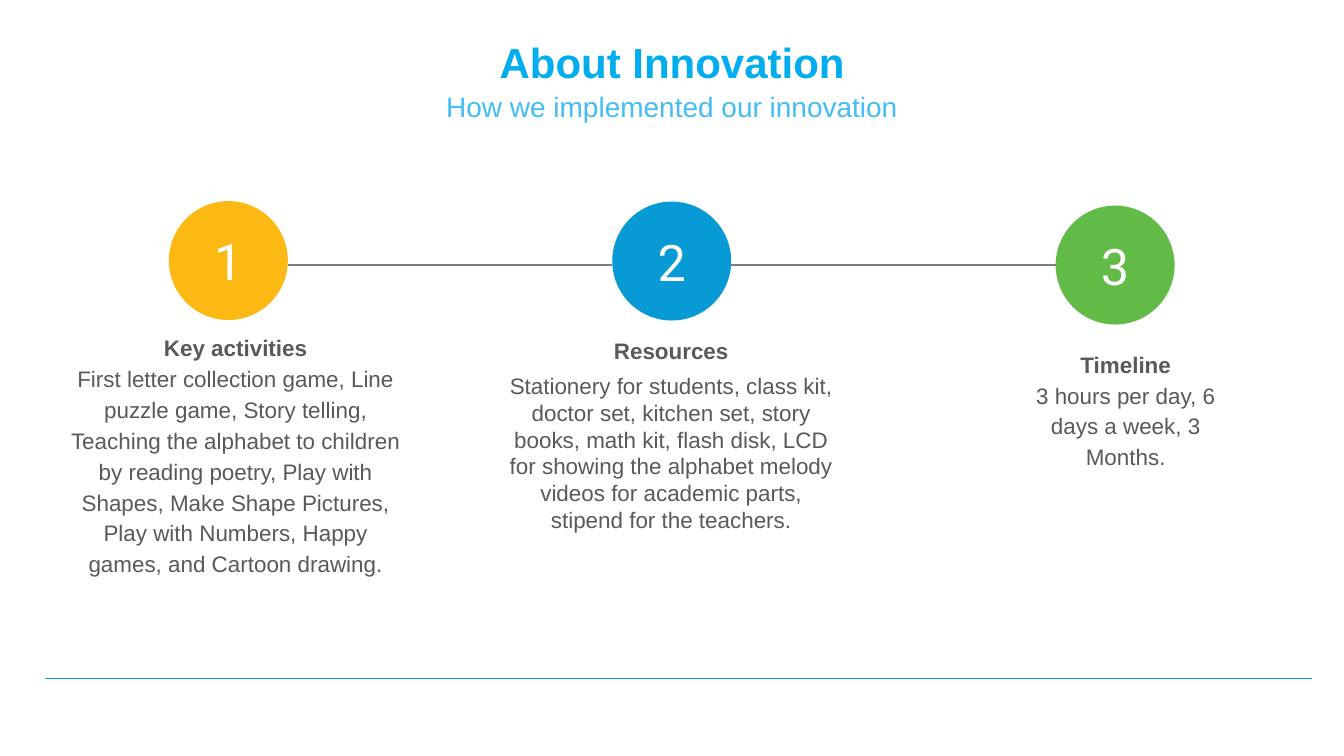
"""Build the three-step "About Innovation" slide."""
from dataclasses import dataclass
from itertools import pairwise

from pptx import Presentation
from pptx.dml.color import RGBColor
from pptx.enum.shapes import MSO_CONNECTOR, MSO_SHAPE
from pptx.enum.text import MSO_ANCHOR, PP_ALIGN
from pptx.oxml import parse_xml
from pptx.oxml.ns import nsdecls
from pptx.slide import Slide
from pptx.text.text import Font, _Paragraph
from pptx.util import Inches, Pt


@dataclass(frozen=True)
class Theme:
    title: str = "00AEEF"
    subtitle: str = "42BEF3"
    body: str = "595959"
    number: str = "FFFFFF"
    link: str = "7F7F7F"
    rule: str = "079AD4"
    text_font: str = "Arial"
    number_font: str = "Roboto"
    title_size: int = 60
    subtitle_size: int = 40
    body_size: int = 32
    number_size: int = 72


@dataclass(frozen=True)
class Box:
    left: float
    top: float
    width: float
    height: float


@dataclass(frozen=True)
class Step:
    heading: str
    detail: str
    color: str
    circle_top: float
    box: Box
    heading_spacing: float = 1.0
    detail_spacing: float = 1.0
    space_after: int = 0
    single_paragraph: bool = False


THEME = Theme()
CIRCLE_SIZE = 2.36
FIRST_CIRCLE_LEFT = 3.35
CIRCLE_PITCH = 8.795
LINK_Y = 5.26
STEPS = (
    Step(
        "Key activities",
        "First letter collection game, Line puzzle game, Story telling, "
        "Teaching the alphabet to children by reading poetry, Play with Shapes, "
        "Make Shape Pictures, Play with Numbers, Happy games, and Cartoon drawing.",
        "FDB913", 3.99, Box(1.26, 6.58, 6.83, 4.92), detail_spacing=1.15,
    ),
    Step(
        "Resources",
        "Stationery for students, class kit, doctor set, kitchen set, story books, "
        "math kit, flash disk, LCD for showing the alphabet melody videos for "
        "academic parts, stipend for the teachers.",
        "079AD5", 4.0, Box(9.9, 6.63, 6.83, 4.04), space_after=12,
    ),
    Step(
        "Timeline",
        "3 hours per day, 6 days a week, 3 Months.",
        "62BB46", 4.08, Box(20.01, 6.83, 4.64, 2.53),
        heading_spacing=1.15, single_paragraph=True,
    ),
)


def style_font(font: Font, name: str, size: int, color: str) -> None:
    """Apply a typeface, size and colour."""
    font.name = name
    font.size = Pt(size)
    font.color.rgb = RGBColor.from_string(color)


def format_paragraph(paragraph: _Paragraph, size: int, color: str, spacing: float) -> None:
    """Centre a paragraph and set its text style."""
    paragraph.alignment = PP_ALIGN.CENTER
    paragraph.line_spacing = spacing
    style_font(paragraph.font, THEME.text_font, size, color)


def add_text_box(slide: Slide, box: Box):
    """Add a wrapping text box and return its text frame."""
    frame = slide.shapes.add_textbox(
        Inches(box.left), Inches(box.top), Inches(box.width), Inches(box.height)
    ).text_frame
    frame.word_wrap = True
    return frame


def add_headline(slide: Slide, text: str, box: Box, size: int, color: str, bold: bool) -> None:
    """Add a centred one-line headline."""
    paragraph = add_text_box(slide, box).paragraphs[0]
    paragraph.text = text
    format_paragraph(paragraph, size, color, 0.9)
    paragraph.font.bold = bold


def add_line(slide: Slide, start: float, end: float, y: float, color: str, width: float) -> None:
    """Draw a horizontal line without a shadow."""
    line = slide.shapes.add_connector(
        MSO_CONNECTOR.STRAIGHT, Inches(start), Inches(y), Inches(end), Inches(y)
    )
    line.line.color.rgb = RGBColor.from_string(color)
    line.line.width = Pt(width)
    line._element.spPr.append(parse_xml(f"<a:effectLst {nsdecls('a')}/>"))


def add_circle(slide: Slide, number: int, left: float, step: Step) -> None:
    """Draw a numbered circle."""
    circle = slide.shapes.add_shape(
        MSO_SHAPE.OVAL, Inches(left), Inches(step.circle_top),
        Inches(CIRCLE_SIZE), Inches(CIRCLE_SIZE),
    )
    circle.shadow.inherit = False
    circle.fill.solid()
    circle.fill.fore_color.rgb = RGBColor.from_string(step.color)
    circle.line.fill.background()
    frame = circle.text_frame
    frame.vertical_anchor = MSO_ANCHOR.MIDDLE
    frame.margin_left = frame.margin_right = Inches(0.2)
    frame.margin_top = frame.margin_bottom = Inches(0.1)
    label = frame.paragraphs[0]
    label.text = str(number)
    label.alignment = PP_ALIGN.CENTER
    style_font(label.font, THEME.number_font, THEME.number_size, THEME.number)


def add_description(slide: Slide, step: Step) -> None:
    """Write a step's bold heading and its detail."""
    frame = add_text_box(slide, step.box)
    heading = frame.paragraphs[0]
    title = heading.add_run()
    title.text = step.heading
    title.font.bold = True
    if step.single_paragraph:
        heading.add_line_break()
        detail = heading
    else:
        detail = frame.add_paragraph()
        format_paragraph(detail, THEME.body_size, THEME.body, step.detail_spacing)
        detail.space_after = Pt(step.space_after)
    detail.add_run().text = step.detail
    format_paragraph(heading, THEME.body_size, THEME.body, step.heading_spacing)
    heading.space_after = Pt(step.space_after)


def main() -> None:
    """Build and save the slide."""
    deck = Presentation()
    deck.slide_width, deck.slide_height = Inches(26.66), Inches(15)
    slide = deck.slides.add_slide(deck.slide_layouts[6])
    title_box, subtitle_box = Box(2.85, 0.78, 20.97, 1.21), Box(3.84, 1.8, 18.97, 0.95)
    add_headline(slide, "About Innovation", title_box, THEME.title_size, THEME.title, True)
    add_headline(slide, "How we implemented our innovation", subtitle_box,
                 THEME.subtitle_size, THEME.subtitle, False)
    add_line(slide, 0.9, 26.03, 13.45, THEME.rule, 0.25)
    lefts = [FIRST_CIRCLE_LEFT + i * CIRCLE_PITCH for i in range(len(STEPS))]
    for number, (left, step) in enumerate(zip(lefts, STEPS), start=1):
        add_description(slide, step)
        add_circle(slide, number, left, step)
    for left, next_left in pairwise(lefts):
        add_line(slide, left + CIRCLE_SIZE, next_left, LINK_Y, THEME.link, 1.75)
    deck.save("out.pptx")


if __name__ == "__main__":
    main()
